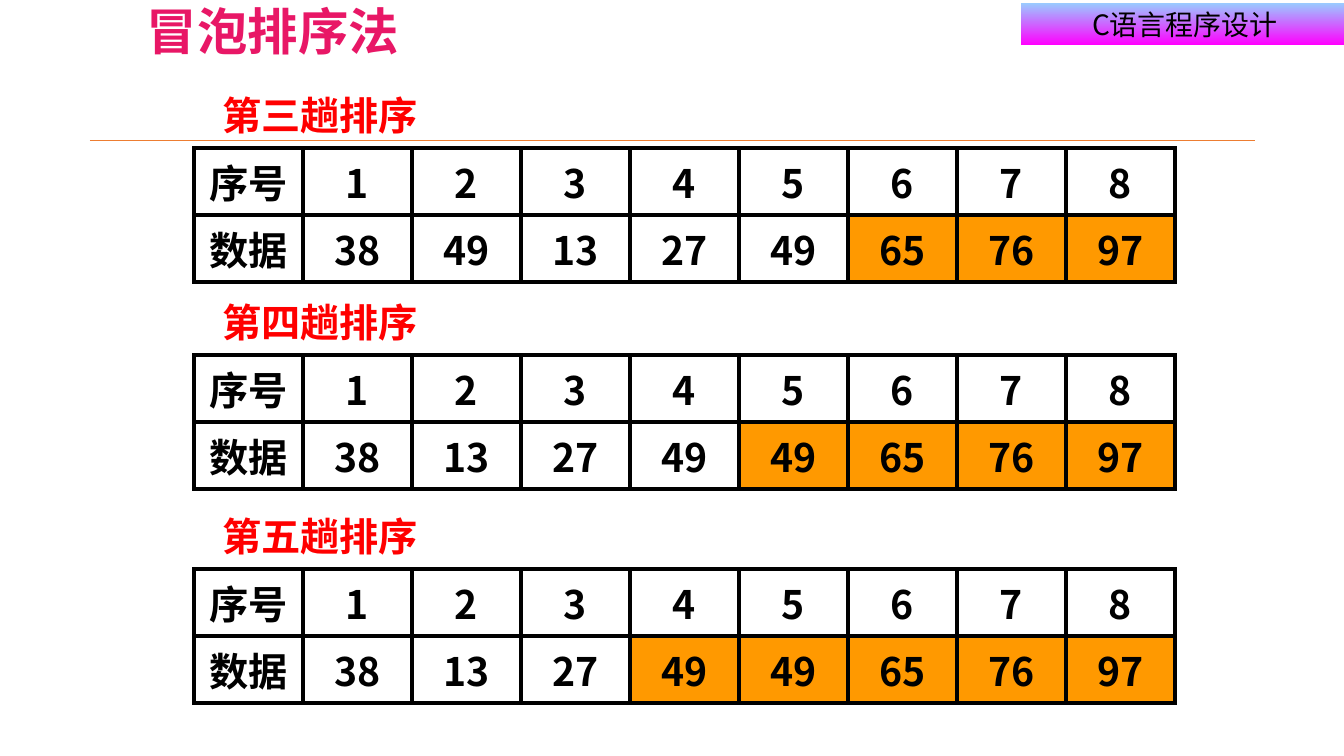
from lxml import etree
from pptx import Presentation
from pptx import util as u
from pptx.dml.color import RGBColor
from pptx.enum import shapes, text
from pptx.oxml import ns, parse_xml

PX = 6804  # EMU in one px
SANS = "Noto Sans CJK SC"
NS = ns.nsdecls("a")


def ink(code):
    """Turn a hex string into a colour."""
    return RGBColor.from_string(code)


def write(frame, words, size=21, font=SANS, east=SANS, color="000000", bold=True):
    """Put one centred line into a text frame and return its run."""
    para = frame.paragraphs[0]
    para.alignment = text.PP_ALIGN.CENTER
    run = para.add_run()
    run.text = words
    run.font.size = u.Pt(size)
    run.font.bold = bold
    run.font.name = font
    run.font.color.rgb = ink(color)
    etree.SubElement(run.font._element, ns.qn("a:ea"), typeface=east)
    return run


deck = Presentation()
deck.slide_width = 1344 * PX
deck.slide_height = 756 * PX
slide = deck.slides.add_slide(deck.slide_layouts[6])

# Course banner
banner = slide.shapes.add_shape(
    shapes.MSO_SHAPE.RECTANGLE, 1021 * PX, 3 * PX, 328 * PX, 42 * PX)
banner.shadow.inherit = False
banner.line.fill.background()
banner.fill.gradient()
banner.fill.gradient_angle = 270
for stop, place, code in zip(banner.fill.gradient_stops, (0, 1), ("99CCFF", "FF00FF")):
    stop.position = place
    stop.color.rgb = ink(code)
banner.text_frame.vertical_anchor = text.MSO_ANCHOR.MIDDLE
write(banner.text_frame, "C语言程序设计", size=15, bold=False)

# Title with rainbow letters
title = slide.shapes.add_textbox(27 * PX, 0, 492 * PX, 40 * PX).text_frame
title.word_wrap = False
title.margin_top = title.margin_bottom = 0
run = write(title, "冒泡排序法", size=27, font="Noto Sans CJK JP", east="Noto Sans CJK JP")
rainbow = [(0, "A603AB"), (12, "E81766"), (27, "EE3F17"), (48, "FFFF00"),
           (65, "1A8D48"), (79, "0819FB"), (100, "A603AB")]
stops = "".join(f'<a:gs pos="{at * 1000}"><a:srgbClr val="{code}"/></a:gs>'
                for at, code in rainbow)
props = run.font._element
props.replace(props.find(ns.qn("a:solidFill")), parse_xml(
    f'<a:gradFill {NS}><a:gsLst>{stops}</a:gsLst><a:lin ang="0" scaled="0"/></a:gradFill>'))
props.insert(0, parse_xml(
    f'<a:ln {NS} w="12700"><a:solidFill><a:srgbClr val="EAEAEA"/></a:solidFill></a:ln>'))

# Divider
rule = slide.shapes.add_connector(
    shapes.MSO_CONNECTOR.STRAIGHT, 90 * PX, 140 * PX, 1255 * PX, 140 * PX)
rule.line.color.rgb = ink("ED7D31")
rule.line.width = u.Pt(0.25)
etree.SubElement(rule._element.spPr, ns.qn("a:effectLst"))

# Sorting passes: heading, top, data, count of values already in place
passes = [
    ("第三趟排序", 148, [38, 49, 13, 27, 49, 65, 76, 97], 3),
    ("第四趟排序", 355, [38, 13, 27, 49, 49, 65, 76, 97], 4),
    ("第五趟排序", 569, [38, 13, 27, 49, 49, 65, 76, 97], 5),
]
for name, top, data, done in passes:
    grid = slide.shapes.add_table(2, 9, 194 * PX, top * PX, 981 * PX, 134 * PX).table
    grid.first_row = grid.horz_banding = False
    for col in grid.columns:
        col.width = 109 * PX
    for r, row in enumerate([["序号", *range(1, 9)], ["数据", *data]]):
        grid.rows[r].height = 67 * PX
        for c, value in enumerate(row):
            cell = grid.cell(r, c)
            cell.vertical_anchor = text.MSO_ANCHOR.MIDDLE
            cell.margin_left = cell.margin_right = 9 * PX
            cell.margin_top = cell.margin_bottom = 5 * PX
            for side in "LRTB":
                cell._tc.get_or_add_tcPr().append(parse_xml(
                    f'<a:ln{side} {NS} w="25400"><a:solidFill>'
                    f'<a:srgbClr val="000000"/></a:solidFill></a:ln{side}>'))
            if r == 1 and c > 8 - done:
                cell.fill.solid()
                cell.fill.fore_color.rgb = ink("FF9900")
            else:
                cell.fill.background()
            write(cell.text_frame, str(value))

    head = slide.shapes.add_textbox(207 * PX, (top - 63) * PX, 226 * PX, 60 * PX).text_frame
    head.word_wrap = False
    head.auto_size = text.MSO_AUTO_SIZE.SHAPE_TO_FIT_TEXT
    write(head, name, font="Arial", color="FF0000")

deck.save("out.pptx")
